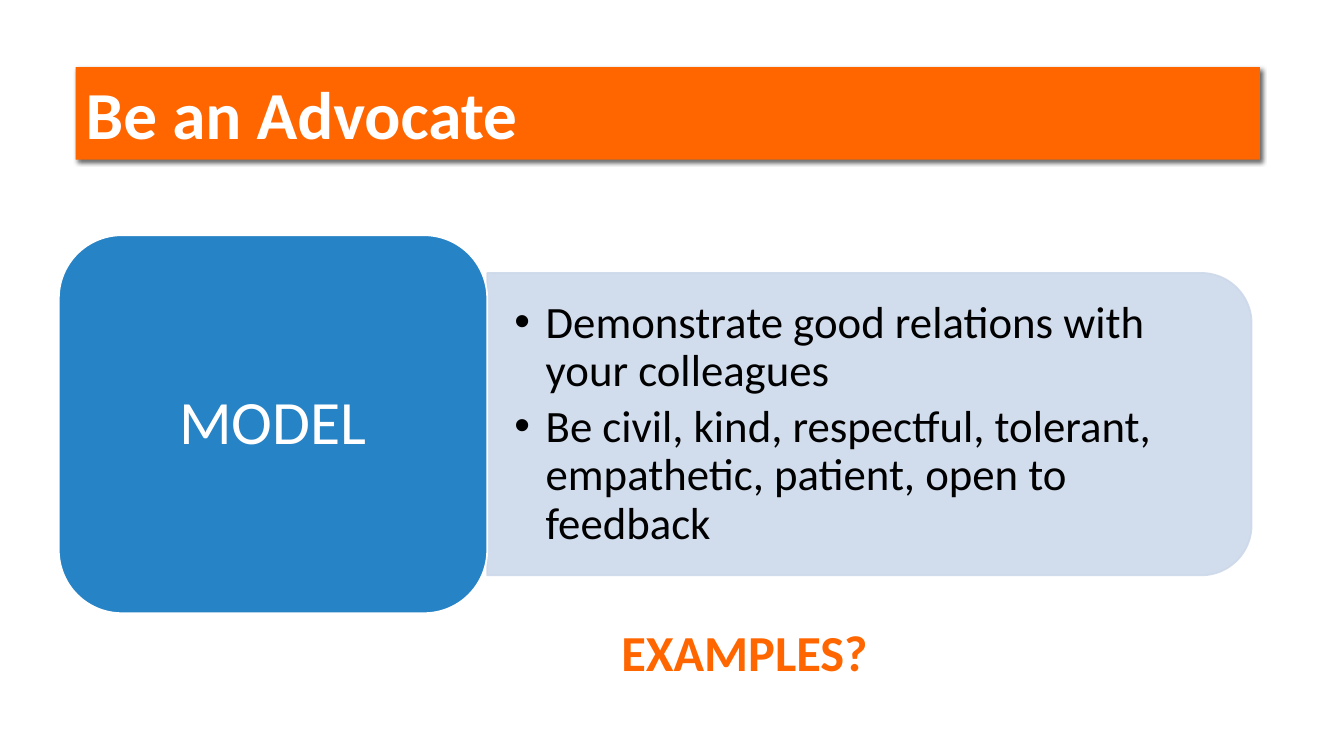
"""Build the "Be an Advocate" slide with its MODEL card and advice panel."""
from dataclasses import dataclass

from lxml.etree import SubElement
from pptx import Presentation
from pptx.dml.color import RGBColor
from pptx.enum.shapes import MSO_SHAPE
from pptx.enum.text import MSO_ANCHOR, MSO_AUTO_SIZE, PP_ALIGN
from pptx.oxml.ns import qn
from pptx.util import Inches, Pt


@dataclass(frozen=True)
class Theme:
    font: str = "Calibri"
    orange: RGBColor = RGBColor.from_string("FF6600")
    blue: RGBColor = RGBColor.from_string("2683C6")
    pale: RGBColor = RGBColor.from_string("CDD9EA")
    white: RGBColor = RGBColor.from_string("FFFFFF")
    black: RGBColor = RGBColor.from_string("000000")
    title: int = 48
    label: int = 44
    prompt: int = 36
    bullet: int = 32


theme = Theme()
COLUMNS, ROWS = 160, 90
deck = Presentation()
deck.slide_width, deck.slide_height = Inches(13.333), Inches(7.5)
cell = deck.slide_height / ROWS


def grid(*lengths):
    return [round(length * cell) for length in lengths]


def write(holder, *lines, size, color, bold=False, align=PP_ALIGN.LEFT, anchor=MSO_ANCHOR.TOP,
          insets=(0.1, 0.05), spacing=1.0, after=0, indent=0):
    frame = holder.text_frame
    frame.word_wrap = True
    frame.auto_size = MSO_AUTO_SIZE.NONE
    frame.vertical_anchor = anchor
    frame.margin_left = frame.margin_right = Inches(insets[0])
    frame.margin_top = frame.margin_bottom = Inches(insets[1])
    frame.text = "\n".join(lines)
    for paragraph in frame.paragraphs:
        properties = paragraph._p.get_or_add_pPr()
        properties.set("marL", str(Inches(indent)))
        properties.set("indent", str(-Inches(indent)))
        if indent:
            SubElement(properties, qn("a:buFont"), typeface="Arial")
            SubElement(properties, qn("a:buChar"), char="•")
        paragraph.alignment = align
        paragraph.line_spacing = spacing
        paragraph.space_before, paragraph.space_after = Pt(0), Pt(after)
        for run in paragraph.runs:
            run.font.name, run.font.size, run.font.bold = theme.font, Pt(size), bold
            run.font.color.rgb = color


slide = deck.slides.add_slide(deck.slide_layouts[1])
heading, advice = slide.placeholders

heading.left, heading.top, heading.width, heading.height = grid(9, 8, 141, 11)
heading.fill.solid()
heading.fill.fore_color.rgb = theme.orange
heading.shadow.inherit = False
shadow = SubElement(heading.element.spPr.find(qn("a:effectLst")), qn("a:outerShdw"),
                    blurRad=str(Pt(3.5)), dist=str(Pt(2)), dir=str(45 * 60000), algn="tl")
shade = SubElement(shadow, qn("a:srgbClr"), val=str(theme.black))
SubElement(shade, qn("a:alpha"), val="60000")
write(heading, "Be an Advocate", size=theme.title, color=theme.white, bold=True)

card_left, card_top, card_width, card_height = 7, 28, 51, 45
panel_left, panel_width, panel_height = card_left + card_width, 91, 36
middle = card_top + card_height / 2

panel = slide.shapes.add_shape(
    MSO_SHAPE.ROUND_2_SAME_RECTANGLE,
    *grid(panel_left + (panel_width - panel_height) / 2, middle - panel_width / 2,
          panel_height, panel_width))
panel.rotation = 90
card = slide.shapes.add_shape(
    MSO_SHAPE.ROUNDED_RECTANGLE, *grid(card_left, card_top, card_width, card_height))

for block, fill, edge in ((panel, theme.pale, theme.pale), (card, theme.blue, theme.white)):
    block.shadow.inherit = False
    block.fill.solid()
    block.fill.fore_color.rgb = fill
    block.line.color.rgb = edge
    block.line.width = Pt(1.25)
for tint in panel.element.spPr.iter(qn("a:srgbClr")):
    SubElement(tint, qn("a:alpha"), val="90000")

write(card, "MODEL", size=theme.label, color=theme.white, align=PP_ALIGN.CENTER,
      anchor=MSO_ANCHOR.MIDDLE, spacing=0.9)

advice.element.addprevious(panel.element)
advice_height = 32.4
advice.left, advice.top, advice.width, advice.height = grid(
    panel_left, middle - advice_height / 2, 89.2, advice_height)
write(advice, "Demonstrate good relations with your colleagues",
      "Be civil, kind, respectful, tolerant, empathetic, patient, open to feedback",
      size=theme.bullet, color=theme.black, anchor=MSO_ANCHOR.MIDDLE,
      insets=(0.27, 0.14), spacing=0.9, after=5.5, indent=0.31)

prompt = slide.shapes.add_textbox(*grid(72.8, 73.4, 53.2, 8.5))
write(prompt, "EXAMPLES?", size=theme.prompt, color=theme.orange, bold=True)

deck.save("out.pptx")
